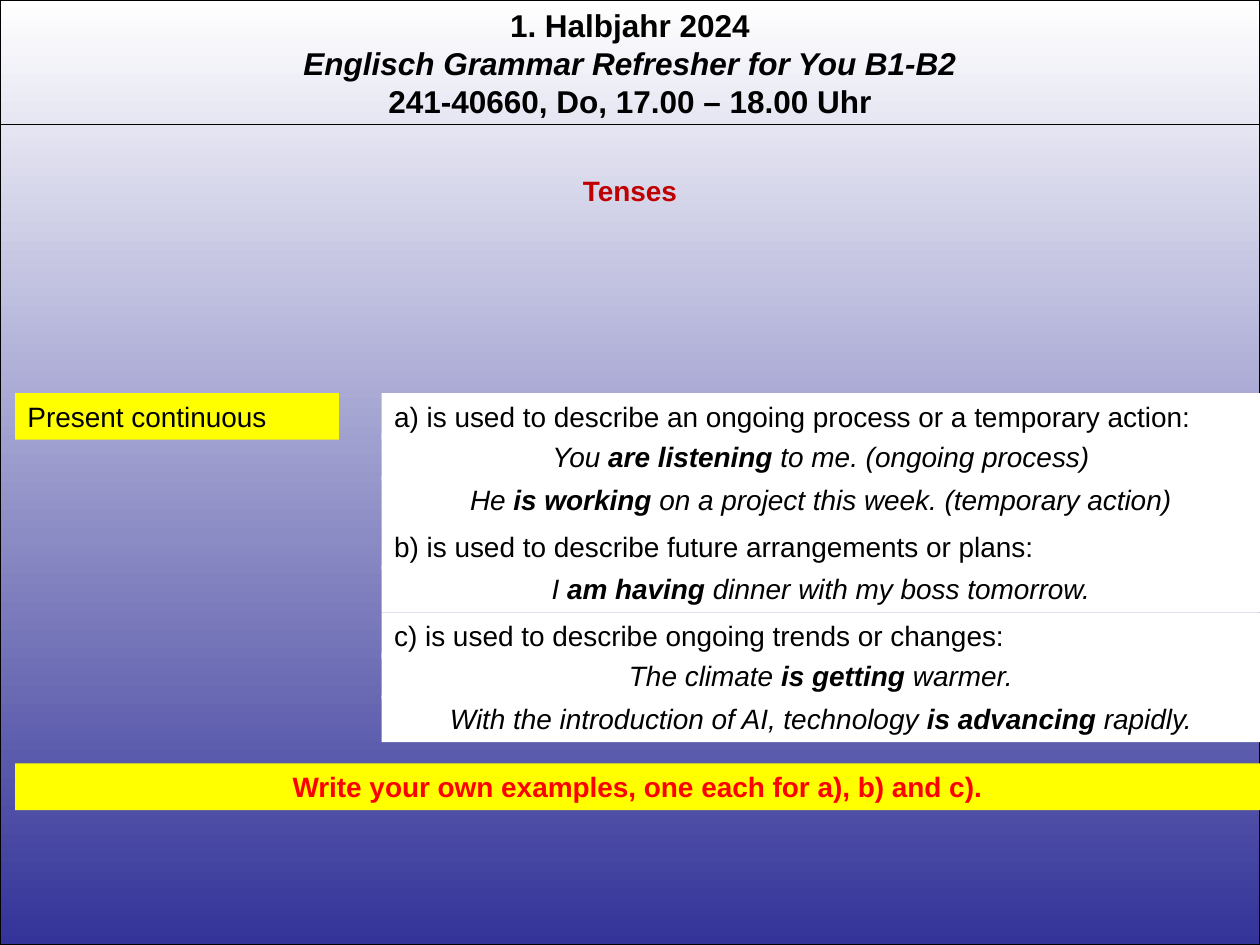
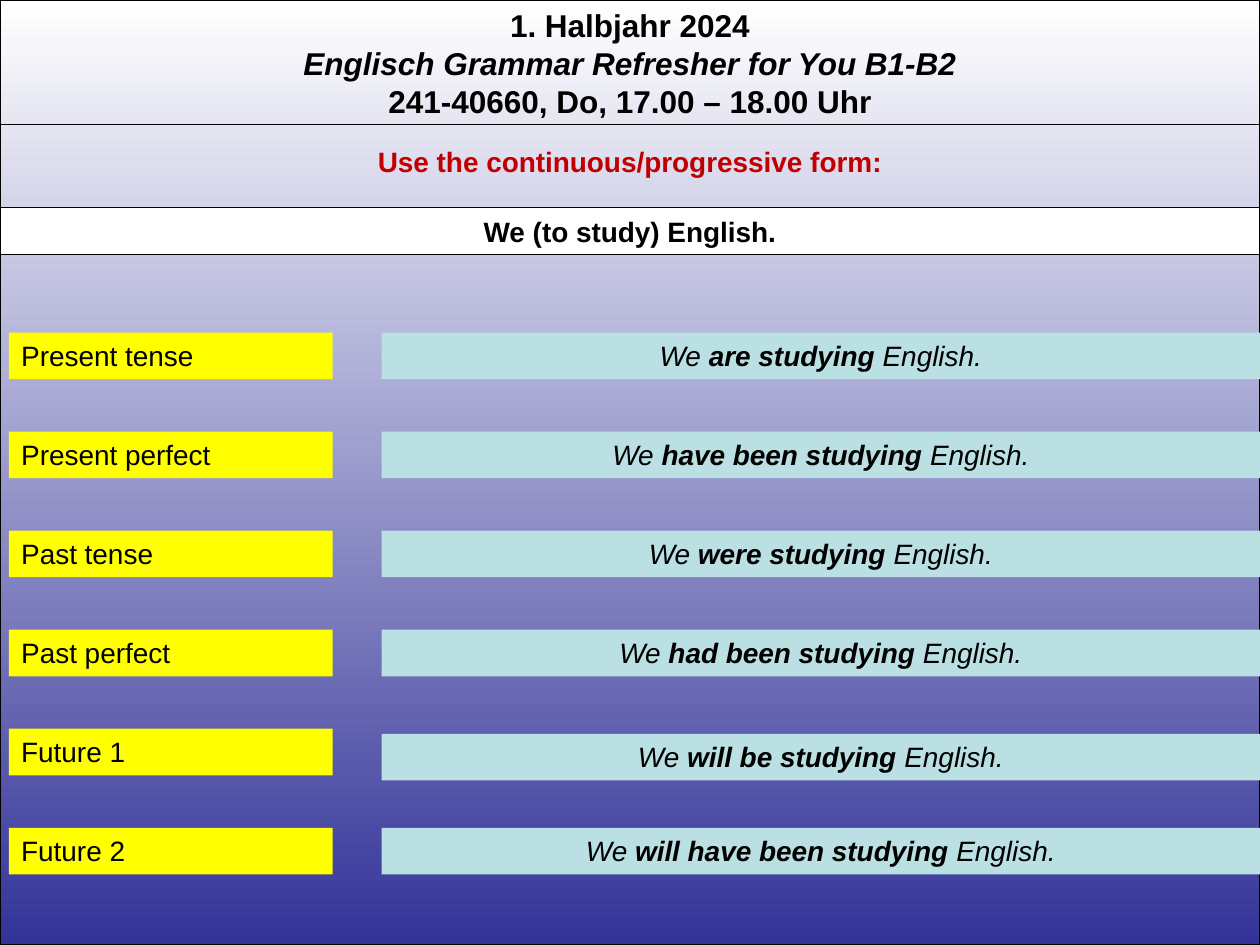
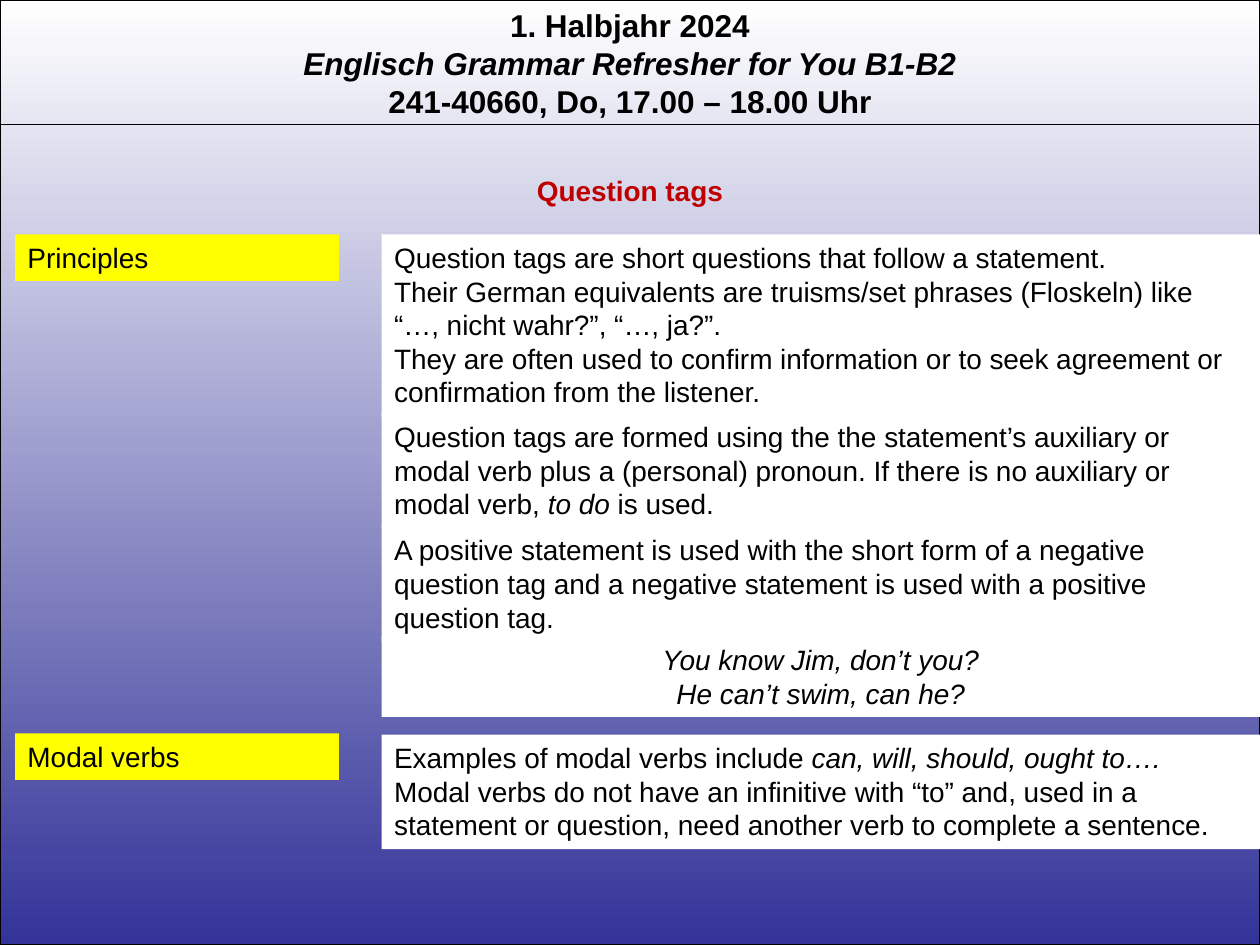
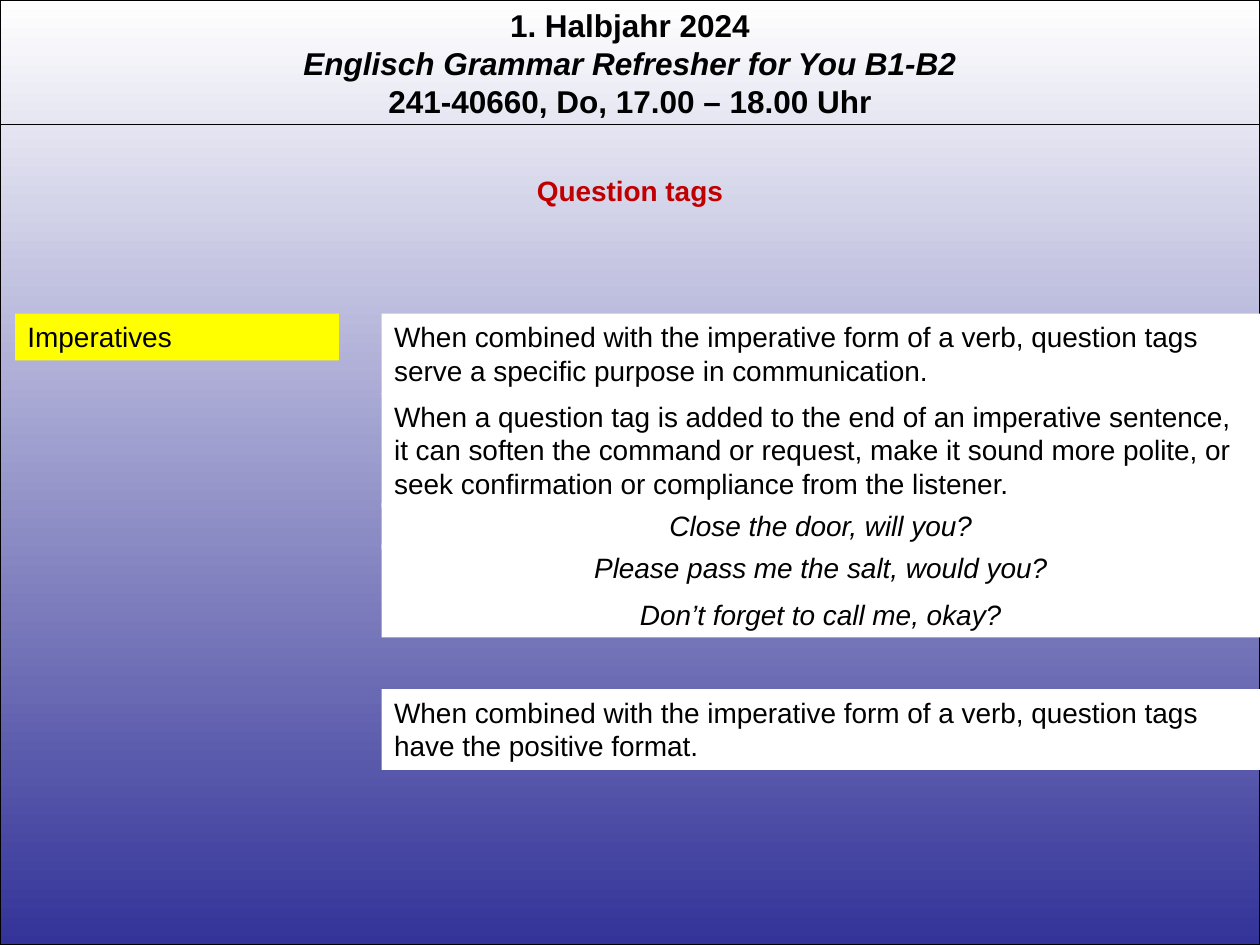
from pptx import Presentation
from pptx.dml.color import RGBColor
from pptx.enum.shapes import MSO_CONNECTOR, MSO_SHAPE
from pptx.enum.text import MSO_ANCHOR, MSO_AUTO_SIZE, PP_ALIGN
from pptx.oxml.ns import qn
from pptx.util import Inches, Pt
from lxml import etree

RECT = MSO_SHAPE.RECTANGLE
STRAIGHT = MSO_CONNECTOR.STRAIGHT
TOP = MSO_ANCHOR.TOP
GROW = MSO_AUTO_SIZE.SHAPE_TO_FIT_TEXT
LEFT, CENTER = PP_ALIGN.LEFT, PP_ALIGN.CENTER

FONT = "Arial"
HEX = {"white": "FFFFFF", "black": "000000", "blue": "333399", "dark": "C00000",
       "red": "FF0000", "yellow": "FFFF00", "mint": "BBE0E3"}
COL = {name: RGBColor.from_string(code) for name, code in HEX.items()}

LABEL_X, LABEL_W = 0.12, 2.57
BODY_X, BODY_W = 3.03, 6.97


def write(shape, paras, size=16, color="black", align=LEFT, bold=False, slant=False):
    """Fill a shape with paragraphs; parts between bars stand out."""
    frame = shape.text_frame
    frame.word_wrap = True
    frame.vertical_anchor = TOP
    frame.auto_size = GROW
    for i, text in enumerate(paras):
        para = frame.paragraphs[0] if i == 0 else frame.add_paragraph()
        para.alignment = align
        font = para.font
        font.name, font.size, font.color.rgb = FONT, Pt(size), COL[color]
        font.bold, font.italic = bold, slant
        for j, part in enumerate(text.split("|")):
            run = para.add_run()
            run.text = part
            if j % 2 and slant:
                run.font.bold = True
            elif j % 2:
                run.font.italic = True


def box(shapes, x, y, w, paras, fill="white", lines=1, **style):
    """Add a filled text bar as high as its lines."""
    shape = shapes.add_shape(RECT, Inches(x), Inches(y), Inches(w),
                             Inches(0.1 + 0.27 * lines))
    shape.shadow.inherit = False
    shape.fill.solid()
    shape.fill.fore_color.rgb = COL[fill]
    shape.line.fill.background()
    write(shape, paras, **style)
    return shape


deck = Presentation()
deck.slide_width, deck.slide_height = Inches(10), Inches(7.5)
layout = deck.slide_layouts[5]

# Slides with their titles
slides = []
for title, top in [("Tenses", 1.33), ("Use the continuous/progressive form:", 1.1),
                   ("Question tags", 1.33), ("Question tags", 1.33)]:
    slide = deck.slides.add_slide(layout)
    head = slide.shapes.title
    head.left, head.top = Inches(0), Inches(top)
    head.width, head.height = Inches(10), Inches(0.37)
    write(head, [title], color="dark", align=CENTER, bold=True)
    slides.append(slide)
tense, form, tags, order = [slide.shapes for slide in slides]

# Shared backdrop, header and rule, moved to the layout
back = tense.add_shape(RECT, 0, 0, Inches(10), Inches(7.5))
back.shadow.inherit = False
back.fill.gradient()
back.fill.gradient_angle = 270
for stop, name, place in zip(back.fill.gradient_stops, ["white", "blue"], [0, 1]):
    stop.color.rgb = COL[name]
    stop.position = place

header = tense.add_textbox(0, 0, Inches(10), Inches(1.01))
write(header, ["1. Halbjahr 2024", "Englisch Grammar Refresher for You B1-B2",
               "241-40660, Do, 17.00 – 18.00 Uhr"],
      size=18, align=CENTER, bold=True)
header.text_frame.paragraphs[1].font.italic = True

rule = tense.add_connector(STRAIGHT, 0, Inches(0.99), Inches(10), Inches(0.99))
etree.SubElement(rule._element.spPr, qn("a:effectLst"))
for item in (back, rule):
    item.line.color.rgb = COL["black"]
    item.line.width = Pt(0.75)
for spot, item in enumerate([back, header, rule], start=2):
    layout.shapes._spTree.insert(spot, item._element)

# Yellow labels
for shapes, y, text in [(tense, 3.12, "Present continuous"), (tags, 1.86, "Principles"),
                        (tags, 5.82, "Modal verbs"), (order, 2.49, "Imperatives")]:
    box(shapes, LABEL_X, y, LABEL_W, [text], "yellow")

# Slide 1: uses and examples
for y, text in [
    (3.12, "a) is used to describe an ongoing process or a temporary action:"),
    (3.44, "You |are listening |to me. (ongoing process)"),
    (3.78, "He |is working |on a project this week. (temporary action)"),
    (4.15, "b) is used to describe future arrangements or plans:"),
    (4.49, "I |am having |dinner with my boss tomorrow."),
    (4.86, "c) is used to describe ongoing trends or changes:"),
    (5.18, "The climate |is getting |warmer."),
    (5.52, "With the introduction of AI, technology |is advancing |rapidly."),
]:
    sample = "|" in text
    box(tense, BODY_X, y, BODY_W, [text], align=CENTER if sample else LEFT, slant=sample)
box(tense, LABEL_X, 6.06, 9.88, ["Write your own examples, one each for a), b) and c)."],
    "yellow", color="red", align=CENTER, bold=True)

# Slide 2: one row per tense
task = box(form, 0, 1.65, 10, ["We (to study) English."], align=CENTER, bold=True)
task.line.color.rgb = COL["black"]
task.line.width = Pt(0.75)
names = form.add_group_shape().shapes
first, last = 2.64, 6.57
rows = [("Present tense", "are", 0), ("Present perfect", "have been", 0),
        ("Past tense", "were", 0), ("Past perfect", "had been", 0),
        ("Future 1", "will be", 0.04), ("Future 2", "will have been", 0)]
for i, (name, verb, drop) in enumerate(rows):
    y = first + i * (last - first) / (len(rows) - 1)
    box(names, 0.07, y, LABEL_W, [name], "yellow")
    box(form, BODY_X, y + drop, BODY_W, [f"We |{verb} studying |English."], "mint",
        align=CENTER, slant=True)

# Slides 3 and 4: explanations
for shapes, y, lines, paras in [
    (tags, 1.86, 5, [
        "Question tags are short questions that follow a statement.",
        "Their German equivalents are truisms/set phrases (Floskeln) like",
        "“…, nicht wahr?”, “…, ja?”.",
        "They are often used to confirm information or to seek agreement or "
        "confirmation from the listener."]),
    (tags, 3.28, 3, [
        "Question tags are formed using the the statement’s auxiliary or modal verb "
        "plus a (personal) pronoun. If there is no auxiliary or modal verb, "
        "|to do |is used."]),
    (tags, 4.18, 3, [
        "A positive statement is used with the short form of a negative question tag "
        "and a negative statement is used with a positive question tag."]),
    (tags, 5.83, 3, [
        "Examples of modal verbs include |can, will, should, ought to….",
        "Modal verbs do not have an infinitive with “to” and, used in a statement or "
        "question, need another verb to complete a sentence."]),
    (order, 2.49, 2, [
        "When combined with the imperative form of a verb, question tags serve a "
        "specific purpose in communication."]),
    (order, 3.12, 3, [
        "When a question tag is added to the end of an imperative sentence, it can "
        "soften the command or request, make it sound more polite, or seek "
        "confirmation or compliance from the listener."]),
    (order, 5.47, 2, [
        "When combined with the imperative form of a verb, question tags have the "
        "positive format."]),
]:
    box(shapes, BODY_X, y, BODY_W, paras, lines=lines)

# Slides 3 and 4: examples
for shapes, y, paras in [
    (tags, 5.05, ["You know Jim, don’t you?", "He can’t swim, can he?"]),
    (order, 3.99, ["Close the door, will you?"]),
    (order, 4.32, ["Please pass me the salt, would you?"]),
    (order, 4.69, ["Don’t forget to call me, okay?"]),
]:
    box(shapes, BODY_X, y, BODY_W, paras, lines=len(paras), align=CENTER, slant=True)

deck.save("out.pptx")
